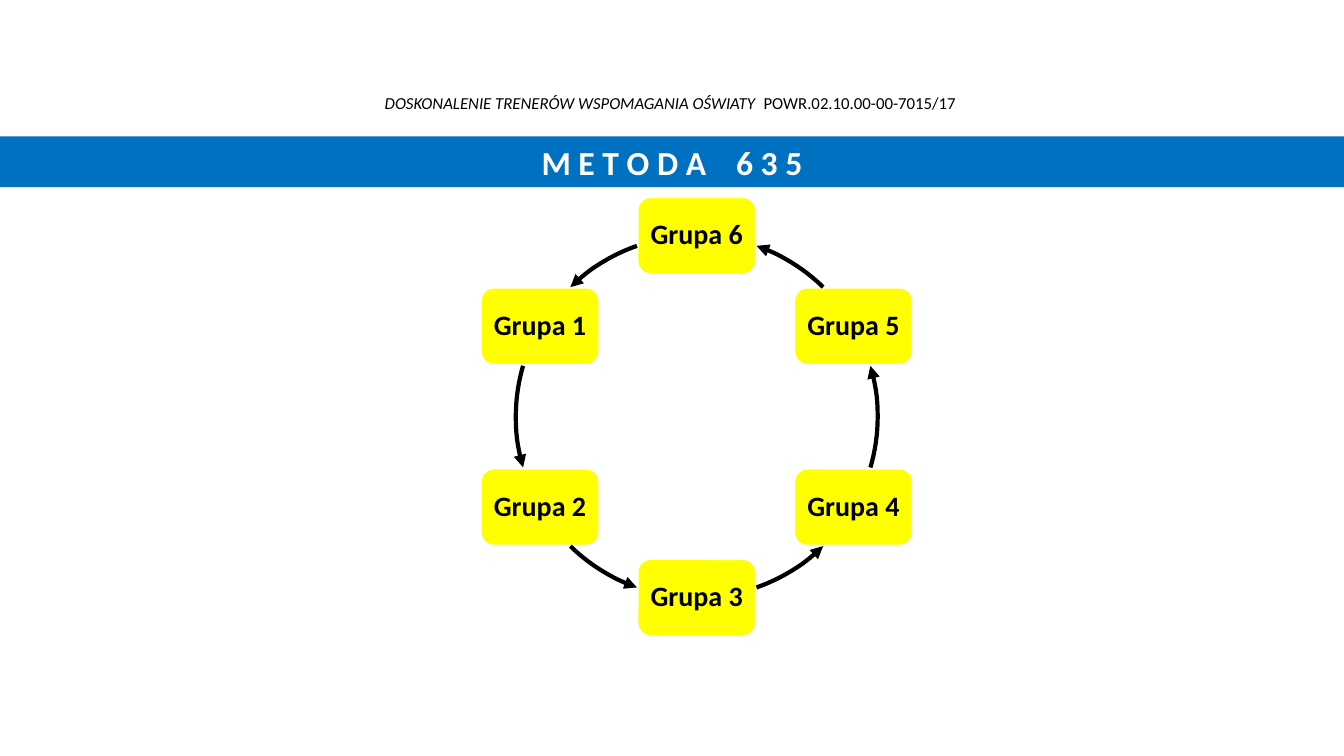
import math

import pptx
import pptx.dml.color
import pptx.enum.shapes
import pptx.enum.text
import pptx.util
from lxml import etree
from pptx.oxml.ns import qn
from pptx.util import Cm

COLORS = {"band": "0070C0", "group": "FFFF00", "ink": "000000", "paper": "FFFFFF"}
FONT = "Calibri"
SLIDE_WIDTH, SLIDE_HEIGHT = 33.87, 19.05
RING_X, RING_Y, RING_RADIUS = 17.56, 10.5, 4.56
GROUP_WIDTH, GROUP_HEIGHT = 2.97, 1.93
SIDE_ARROW = (0, 16.3)
SLANTED_ARROW = (58.2, 12.5)


def rgb(name):
    return pptx.dml.color.RGBColor.from_string(COLORS[name])


def write_line(frame, pieces, size, color, bold=False, line_spacing=1.0):
    paragraph = frame.paragraphs[0]
    paragraph.alignment = pptx.enum.text.PP_ALIGN.CENTER
    paragraph.line_spacing = line_spacing
    for words, italic, spacing in pieces:
        run = paragraph.add_run()
        run.text = words
        run.font.name = FONT
        run.font.size = pptx.util.Pt(size)
        run.font.bold = bold
        run.font.italic = italic
        run.font.color.rgb = rgb(color)
        if spacing:
            run._r.get_or_add_rPr().set("spc", str(spacing * 100))


def add_block(slide, preset, left, top, width, height, fill):
    block = slide.shapes.add_shape(preset, Cm(left), Cm(top), Cm(width), Cm(height))
    block.shadow.inherit = False
    block.fill.solid()
    block.fill.fore_color.rgb = rgb(fill)
    block.line.fill.background()
    block.text_frame.word_wrap = True
    block.text_frame.vertical_anchor = pptx.enum.text.MSO_ANCHOR.MIDDLE
    return block


def add_project_header(slide):
    header = slide.shapes.add_textbox(Cm(2.34), Cm(0), Cm(29.11), Cm(3.1))
    frame = header.text_frame
    frame.word_wrap = True
    frame.vertical_anchor = pptx.enum.text.MSO_ANCHOR.BOTTOM
    frame.margin_bottom = Cm(0.25)
    pieces = [
        ("DOSKONALENIE TRENERÓW WSPOMAGANIA OŚWIATY", True, 0),
        (" ", True, 2.7),
        ("POWR.02.10.00-00-7015/17", False, 0),
    ]
    pieces = [(words, italic, round(spacing)) for words, italic, spacing in pieces]
    write_line(frame, pieces, 12, "ink", line_spacing=0.9)


def add_title_band(slide):
    preset = pptx.enum.shapes.MSO_SHAPE.RECTANGLE
    band = add_block(slide, preset, 0, 3.44, SLIDE_WIDTH, 1.28, "band")
    pieces = [("M E T O D A", False, 0), (" ", False, 16), ("6 3 5", False, 0)]
    write_line(band.text_frame, pieces, 24, "paper", bold=True)


def add_group(slide, number):
    angle = math.radians(-90 - 60 * number)
    left = RING_X + RING_RADIUS * math.cos(angle) - GROUP_WIDTH / 2
    top = RING_Y + RING_RADIUS * math.sin(angle) - GROUP_HEIGHT / 2
    preset = pptx.enum.shapes.MSO_SHAPE.ROUNDED_RECTANGLE
    group = add_block(slide, preset, left, top, GROUP_WIDTH, GROUP_HEIGHT, "group")
    group.line.color.rgb = rgb("paper")
    group.line.width = pptx.util.Pt(1)
    frame = group.text_frame
    frame.margin_left = frame.margin_right = Cm(0.2)
    frame.margin_top = frame.margin_bottom = Cm(0.2)
    write_line(frame, [(f"Grupa {number}", False, 0)], 20, "ink", True, 0.9)


def add_ring_arrow(slide, middle, half_sweep):
    arrow = slide.shapes.add_shape(
        pptx.enum.shapes.MSO_SHAPE.ARC,
        Cm(RING_X - RING_RADIUS),
        Cm(RING_Y - RING_RADIUS),
        Cm(2 * RING_RADIUS),
        Cm(2 * RING_RADIUS),
    )
    arrow.shadow.inherit = False
    arrow.adjustments[0] = (middle - half_sweep) % 360 * 0.6
    arrow.adjustments[1] = (middle + half_sweep) % 360 * 0.6
    arrow.fill.background()
    arrow.line.color.rgb = rgb("ink")
    arrow.line.width = pptx.util.Pt(3)
    etree.SubElement(arrow.line._get_or_add_ln(), qn("a:headEnd"), type="triangle")


def main():
    deck = pptx.Presentation()
    deck.slide_width, deck.slide_height = Cm(SLIDE_WIDTH), Cm(SLIDE_HEIGHT)
    slide = deck.slides.add_slide(deck.slide_layouts[6])
    add_project_header(slide)
    for number in range(1, 7):
        add_group(slide, number)
    side, side_sweep = SIDE_ARROW
    slant, slant_sweep = SLANTED_ARROW
    for middle in (side, 180 - side):
        add_ring_arrow(slide, middle, side_sweep)
    for middle in (slant, 180 - slant, 180 + slant, 360 - slant):
        add_ring_arrow(slide, middle, slant_sweep)
    add_title_band(slide)
    deck.save("out.pptx")


if __name__ == "__main__":
    main()
